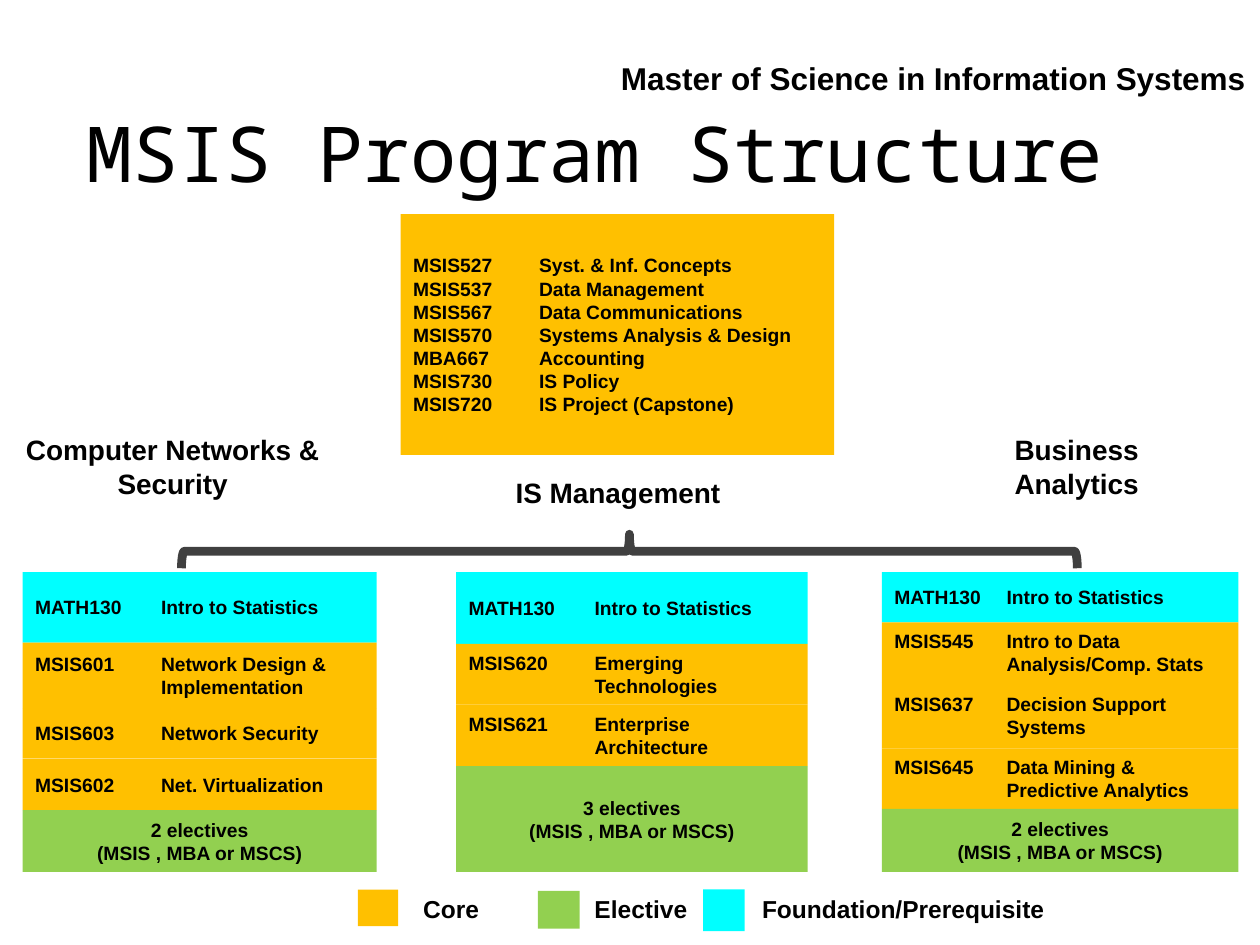
import pptx
import pptx.util
import pptx.dml.color
import pptx.enum.shapes
import pptx.enum.text

RGBColor = pptx.dml.color.RGBColor
CORE = RGBColor(0xFF, 0xC0, 0x00)
ELECTIVE = RGBColor(0x92, 0xD0, 0x50)
FOUNDATION = RGBColor(0x00, 0xFF, 0xFF)
BRACE = RGBColor(0x40, 0x40, 0x40)
BLACK = RGBColor(0x00, 0x00, 0x00)

Align = pptx.enum.text.PP_ALIGN
Anchor = pptx.enum.text.MSO_ANCHOR
Shape = pptx.enum.shapes.MSO_SHAPE

COLUMNS, ROWS = 100, 75
TRACK_TOP = 45.4

CORE_COURSES = [
    "MSIS527\tSyst. & Inf. Concepts",
    "MSIS537\tData Management",
    "MSIS567\tData Communications",
    "MSIS570\tSystems Analysis & Design",
    "MBA667\tAccounting",
    "MSIS730\tIS Policy",
    "MSIS720\tIS Project (Capstone)",
]
STATISTICS = "MATH130\tIntro to Statistics"

TRACKS = [
    (1.8, 28.1, 10, 2, [
        (FOUNDATION, 5.6, STATISTICS),
        (CORE, 5.2, "MSIS601\tNetwork Design &\vImplementation"),
        (CORE, 4, "MSIS603\tNetwork Security"),
        (CORE, 4.1, "MSIS602\tNet. Virtualization")], 4.9),
    (36.2, 27.9, 10, 3, [
        (FOUNDATION, 5.7, STATISTICS),
        (CORE, 4.8, "MSIS620\tEmerging\vTechnologies"),
        (CORE, 4.9, "MSIS621\tEnterprise\vArchitecture")], 8.4),
    (70, 28.3, 8.9, 2, [
        (FOUNDATION, 4, STATISTICS),
        (CORE, 4.8, "MSIS545\tIntro to Data\vAnalysis/Comp. Stats"),
        (CORE, 5.2, "MSIS637\tDecision Support\vSystems"),
        (CORE, 4.8, "MSIS645\tData Mining &\vPredictive Analytics")], 5),
]
TRACK_NAMES = [
    ("Computer Networks & Security", 0.8, 33.8, 25.8, 6.4),
    ("IS Management", 39.8, 37.2, 18.5, 3.7),
    ("Business Analytics", 76.3, 33.8, 18.3, 6.4),
]
LEGEND = [
    ("Core", CORE, 28.4, 70.6, 3.2, 2.9, 32.6, 8),
    ("Elective", ELECTIVE, 42.7, 70.7, 3.3, 3, 46.2, 9.4),
    ("Foundation/Prerequisite", FOUNDATION, 55.8, 70.6, 3.3, 3.3, 59.5, 26),
]


class ProgramSlide:
    font_name = "Arial"
    title_font = "Noto Sans Mono"

    def __init__(self, deck):
        self.column = deck.slide_width / COLUMNS
        self.row = deck.slide_height / ROWS
        self.slide = deck.slides.add_slide(deck.slide_layouts[5])

    def area(self, left, top, width, height):
        return (round(left * self.column), round(top * self.row),
                round(width * self.column), round(height * self.row))

    def set_lines(self, frame, lines, size, align=Align.LEFT, tab=0):
        frame.word_wrap = True
        frame.vertical_anchor = Anchor.MIDDLE
        for index, line in enumerate(lines):
            paragraph = frame.add_paragraph() if index else frame.paragraphs[0]
            paragraph.text = line
            paragraph.alignment = align
            if tab:
                hang = round(tab * self.column)
                properties = paragraph._p.get_or_add_pPr()
                properties.set("marL", str(hang))
                properties.set("indent", str(-hang))
            paragraph.font.name = self.font_name
            paragraph.font.size = pptx.util.Pt(size)
            paragraph.font.bold = True
            paragraph.font.color.rgb = BLACK

    def title(self, text, *area):
        heading = self.slide.shapes.title
        heading.left, heading.top, heading.width, heading.height = self.area(*area)
        frame = heading.text_frame
        frame.auto_size = pptx.enum.text.MSO_AUTO_SIZE.NONE
        frame.vertical_anchor = Anchor.MIDDLE
        frame.margin_right = pptx.util.Inches(0.5)
        frame.text = text
        paragraph = frame.paragraphs[0]
        paragraph.alignment = Align.CENTER
        paragraph.font.name = self.title_font
        paragraph.font.size = pptx.util.Pt(44)
        paragraph.font.color.rgb = BLACK

    def label(self, text, size, align, *area):
        box = self.slide.shapes.add_textbox(*self.area(*area))
        self.set_lines(box.text_frame, [text], size, align)

    def block(self, color, *area, lines=(), align=Align.LEFT, tab=0):
        box = self.slide.shapes.add_shape(Shape.RECTANGLE, *self.area(*area))
        box.shadow.inherit = False
        box.fill.solid()
        box.fill.fore_color.rgb = color
        box.line.fill.background()
        self.set_lines(box.text_frame, lines, 11, align, tab)

    def brace(self, *area):
        brace = self.slide.shapes.add_shape(Shape.LEFT_BRACE, *self.area(*area))
        brace.rotation = 90
        brace.shadow.inherit = False
        brace.fill.background()
        brace.line.color.rgb = BRACE
        brace.line.width = pptx.util.Pt(5)

    def track(self, left, width, tab, elective_count, courses, elective_height):
        top = TRACK_TOP
        for color, height, course in courses:
            self.block(color, left, top, width, height, lines=[course], tab=tab)
            top += height
        self.block(ELECTIVE, left, top, width, elective_height,
                   lines=[f"{elective_count} electives", "(MSIS , MBA or MSCS)"],
                   align=Align.CENTER)


def main():
    deck = pptx.Presentation()
    deck.slide_width = pptx.util.Inches(10)
    deck.slide_height = pptx.util.Inches(7.5)
    program = ProgramSlide(deck)

    program.label("Master of Science in Information Systems", 18, Align.LEFT,
                  48.3, 4.2, 53.3, 4)
    program.title("MSIS Program Structure", 4.7, 7, 89.1, 10)
    program.block(CORE, 31.8, 17, 34.4, 19.1, lines=CORE_COURSES, tab=10)
    for name, *area in TRACK_NAMES:
        program.label(name, 16, Align.CENTER, *area)
    program.brace(48.6, 8.2, 2.7, 71.1)
    for track in TRACKS:
        program.track(*track)
    for name, color, left, top, width, height, label_left, label_width in LEGEND:
        program.block(color, left, top, width, height)
        program.label(name, 14, Align.LEFT, label_left, 70.4, label_width, 3.4)

    deck.save("out.pptx")


if __name__ == "__main__":
    main()
